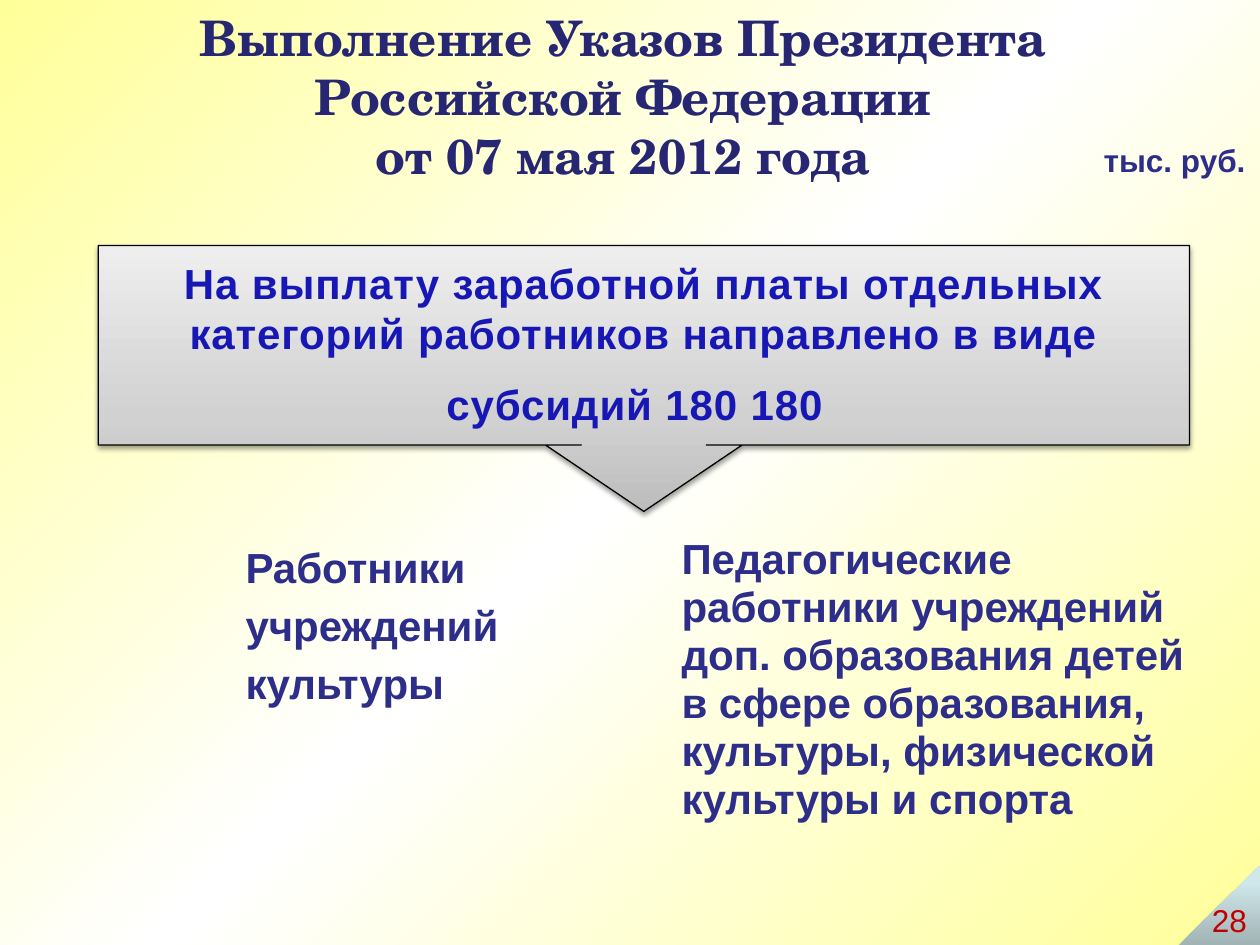
from dataclasses import dataclass

from lxml.etree import SubElement as Sub
from pptx import Presentation
from pptx.dml.color import RGBColor as Rgb
from pptx.enum.shapes import MSO_SHAPE as Kind
from pptx.enum.text import MSO_ANCHOR as Anchor, PP_ALIGN as Align
from pptx.oxml.ns import qn
from pptx.util import Cm, Pt


@dataclass(frozen=True)
class Theme:
    serif: str = "TeX Gyre Schola"
    sans: str = "Arial"
    title: str = "262673"
    body: str = "2D2D8A"
    accent: str = "1717B5"
    page: str = "C00000"
    line: str = "000000"
    back: tuple = ((0, "FFFF99"), (50, "FFFFFF"), (100, "FFFF99"))
    gray: tuple = ((0, "BDBDBD"), (35, "D1D1D1"), (100, "EEEEEE"))
    teal: tuple = ((0, "A0B3B5"), (80, "D0E8EB"), (100, "D1EAEC"))
    head: int = 28
    large: int = 24
    small: int = 18
    tail: int = 36


T = Theme()


def shade(fill, owner, stops, angle):
    """Fill with a gradient of several stops, turning clockwise."""
    fill.gradient()
    grad = next(owner.iter(qn("a:gradFill")))
    for child in list(grad):
        grad.remove(child)
    group = Sub(grad, qn("a:gsLst"))
    for place, color in stops:
        stop = Sub(group, qn("a:gs"), pos=str(place * 1000))
        Sub(stop, qn("a:srgbClr"), val=color)
    Sub(grad, qn("a:lin"), ang=str(angle * 60000), scaled="0")


def cast(shape, alpha, blur, dist):
    """Give the shape a soft shadow falling straight down."""
    shape.shadow.inherit = False
    effect = shape.element.spPr.find(qn("a:effectLst"))
    drop = Sub(effect, qn("a:outerShdw"), blurRad=str(Pt(blur)),
               dist=str(Pt(dist)), dir="5400000", rotWithShape="0")
    color = Sub(drop, qn("a:srgbClr"), val=T.line)
    Sub(color, qn("a:alpha"), val=str(alpha * 1000))


def style(font, size, color, name=T.sans, bold=True):
    font.name, font.size, font.bold = name, Pt(size), bold
    font.color.rgb = Rgb.from_string(color)


def label(slide, box, text, size, color, name=T.sans, bold=True,
          align=Align.LEFT, anchor=Anchor.TOP, wrap=False, space=1.0):
    frame = slide.shapes.add_textbox(*map(Cm, box)).text_frame
    frame.word_wrap = wrap
    frame.vertical_anchor = anchor
    frame.text = text
    for para in frame.paragraphs:
        para.alignment = align
        para.line_spacing = space
        for run in para.runs:
            style(run.font, size, color, name, bold)


def solid(slide, kind, box, stops, shadow):
    shape = slide.shapes.add_shape(kind, *map(Cm, box))
    shade(shape.fill, shape.element, stops, 270)
    cast(shape, *shadow)
    return shape


def callout(slide, box, text):
    shape = solid(slide, Kind.DOWN_ARROW_CALLOUT, box, T.gray, (38, 3.1, 1.6))
    for i, value in enumerate((0.47, 0.37, 0.25, 0.75)):
        shape.adjustments[i] = value
    shape.line.color.rgb = Rgb.from_string(T.line)
    shape.line.width = Pt(0.75)
    frame = shape.text_frame
    frame.word_wrap = True
    frame.vertical_anchor = Anchor.MIDDLE
    frame.text = text
    para = frame.paragraphs[0]
    para.alignment = Align.CENTER
    run = para.runs[0]
    style(run.font, T.large, T.accent)
    run.font._element.set("spc", "50")
    # A larger closing space opens up the last line
    gap = para.add_run()
    gap.text = " "
    style(gap.font, T.tail, T.accent)


def corner(slide, box):
    shape = solid(slide, Kind.RIGHT_TRIANGLE, box, T.teal, (35, 3.1, 1.8))
    shape.line.fill.background()
    shape.element.spPr.find(qn("a:xfrm")).set("flipH", "1")


def main():
    deck = Presentation()
    deck.slide_width, deck.slide_height = Cm(25.4), Cm(19.05)
    slide = deck.slides.add_slide(deck.slide_layouts[6])
    shade(slide.background.fill, slide.element, T.back, 45)

    label(slide, (0.61, 0.13, 23.9, 3.6),
          "Выполнение Указов Президента\nРоссийской Федерации\n"
          "от 07 мая 2012 года",
          T.head, T.title, T.serif, align=Align.CENTER, anchor=Anchor.MIDDLE)
    label(slide, (22, 2.72, 3.4, 1.02), "тыс. руб.", T.small, T.body)
    label(slide, (4.7, 11.33, 7.01, 2.39), "Работники\nучреждений культуры",
          T.large, T.body, anchor=Anchor.MIDDLE, wrap=True, space=1.15)
    label(slide, (13.49, 10.72, 11, 5.99),
          "Педагогические работники учреждений доп. образования детей "
          "в сфере образования, культуры, физической культуры и спорта",
          T.large, T.body, anchor=Anchor.MIDDLE, wrap=True, space=0.95)
    callout(slide, (1.98, 4.95, 22, 5.36),
            "На выплату заработной платы отдельных категорий работников "
            "направлено в виде субсидий 180 180")
    corner(slide, (23.77, 17.45, 1.63, 1.6))
    label(slide, (24.18, 18.03, 1.22, 1.02), "28", T.small, T.page, bold=False)
    deck.save("out.pptx")


if __name__ == "__main__":
    main()
